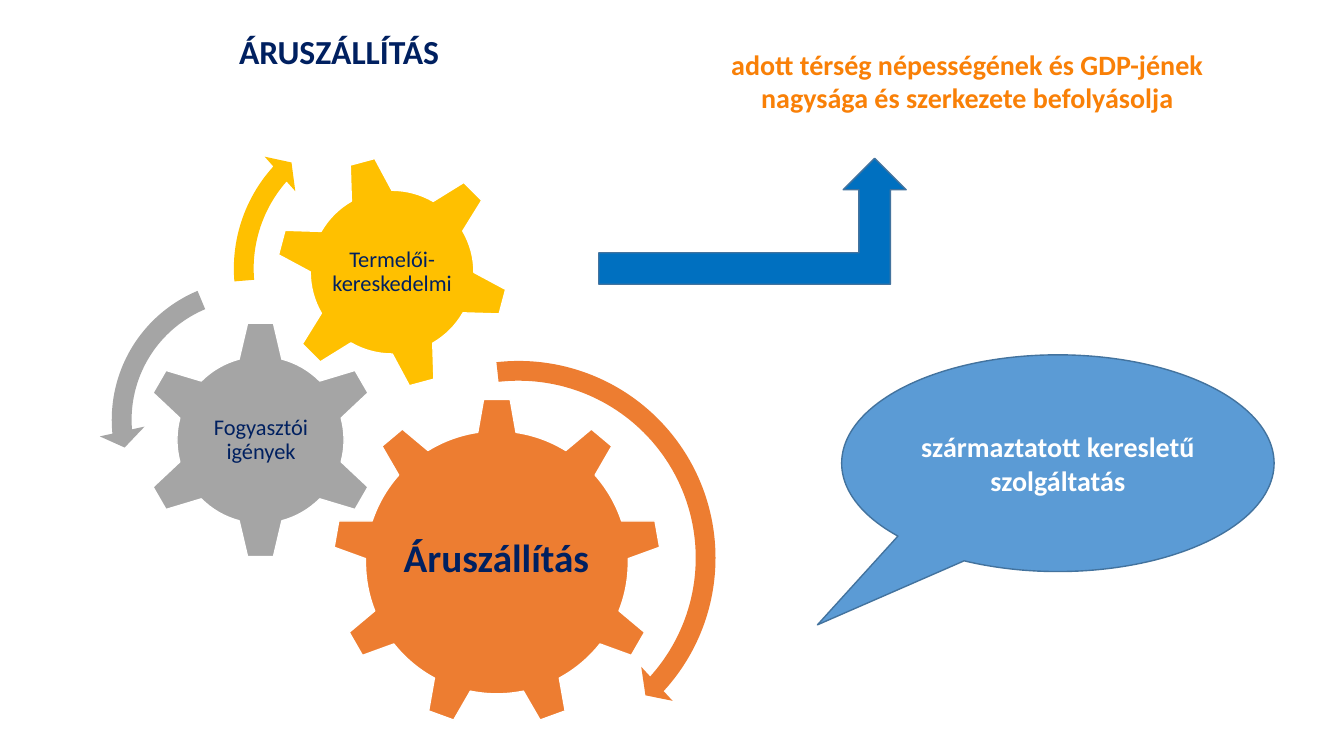
from pptx import Presentation
from pptx import util as u
from pptx.dml.color import RGBColor
from pptx.enum import shapes, text

COLORS = {
    "orange": "ED7D31", "grey": "A5A5A5", "yellow": "FFC000", "white": "FFFFFF",
    "navy": "002060", "blue": "0070C0", "sky": "5B9BD5", "edge": "43739E",
    "amber": "F98007",
}
FORMS = shapes.MSO_SHAPE

deck = Presentation()
deck.slide_width, deck.slide_height = u.Inches(13.33), u.Inches(7.5)
COL, ROW = deck.slide_width / 160, deck.slide_height / 90
slide = deck.slides.add_slide(deck.slide_layouts[6])


def add_form(form, area, fill, edge=None, adjustments=()):
    left, top, width, height = area
    item = slide.shapes.add_shape(
        form, int(left * COL), int(top * ROW), int(width * COL), int(height * ROW))
    item.shadow.inherit = False
    item.fill.solid()
    item.fill.fore_color.rgb = RGBColor.from_string(COLORS[fill])
    if edge:
        item.line.color.rgb = RGBColor.from_string(COLORS[edge])
        item.line.width = u.Pt(1)
    else:
        item.line.fill.background()
    for index, value in enumerate(adjustments):
        item.adjustments[index] = value
    return item


def write(item, wording, size, color, bold=True, inset=None, spacing=None):
    frame = item.text_frame
    frame.text = wording
    frame.word_wrap = True
    if inset is not None:
        frame.margin_left = frame.margin_right = u.Inches(inset)
        frame.margin_top = frame.margin_bottom = u.Inches(inset)
        frame.vertical_anchor = text.MSO_ANCHOR.MIDDLE
    paragraph = frame.paragraphs[0]
    paragraph.alignment = text.PP_ALIGN.CENTER
    if spacing:
        paragraph.line_spacing = spacing
    font = paragraph.runs[0].font
    font.name, font.size, font.bold = "Calibri", u.Pt(size), bold
    font.color.rgb = RGBColor.from_string(COLORS[color])


gears = [
    (FORMS.GEAR_9, (39.6, 47.4, 39.12), 0, "orange",
     "Áruszállítás", (47.4, 56.52, 23.4, 20.16), 28, True, 0.04),
    (FORMS.GEAR_6, (16.8, 38.16, 28.44), 0, "grey",
     "Fogyasztói igények", (24, 45.36, 14.16, 14.04), 16, False, 0.02),
    (FORMS.GEAR_6, (32.76, 18.48, 27.84), 345, "yellow",
     "Termelői-kereskedelmi", (38.88, 24.6, 15.6, 15.6), 16, False, 0.02),
]
for form, (left, top, side), turn, fill, wording, area, size, bold, inset in gears:
    gear = add_form(form, (left, top, side, side), fill, "white")
    gear.rotation = turn
    x, y, width, height = area
    label = slide.shapes.add_textbox(
        int(x * COL), int(y * ROW), int(width * COL), int(height * ROW))
    write(label, wording, size, "navy", bold, inset, 0.9)

turns = [
    (FORMS.CIRCULAR_ARROW, (36.72, 41.4, 50.04), "orange",
     (0.047, 2.99, 25.393, 158.123, 0.055)),
    (FORMS.LEFT_CIRCULAR_ARROW, (11.76, 31.8, 36.36), "grey",
     (0.065, 4.3, 104.891, 148.378, 0.075)),
    (FORMS.CIRCULAR_ARROW, (26.28, 12.36, 39.24), "yellow",
     (0.06, 3.941, 133.138, 105.082, 0.07)),
]
for form, (left, top, side), fill, adjustments in turns:
    add_form(form, (left, top, side, side), fill, adjustments=adjustments)

headings = [
    ("ÁRUSZÁLLÍTÁS", (16.2, 3.12, 48.36, 6), 24, "navy"),
    ("adott térség népességének és GDP-jének nagysága és szerkezete befolyásolja",
     (84.6, 5.04, 61.08, 9.24), 20, "amber"),
]
for wording, (left, top, width, height), size, color in headings:
    heading = slide.shapes.add_textbox(
        int(left * COL), int(top * ROW), int(width * COL), int(height * ROW))
    write(heading, wording, size, color)

add_form(FORMS.BENT_UP_ARROW, (71.28, 18.84, 36.6, 15), "blue", "edge")

derived_demand = add_form(
    FORMS.OVAL_CALLOUT, (100.2, 42.24, 51.48, 25.8), "sky", "edge", (-0.556, 0.746))
write(derived_demand, "származtatott keresletű szolgáltatás", 20, "white")
derived_demand.text_frame.vertical_anchor = text.MSO_ANCHOR.MIDDLE

deck.save("out.pptx")
